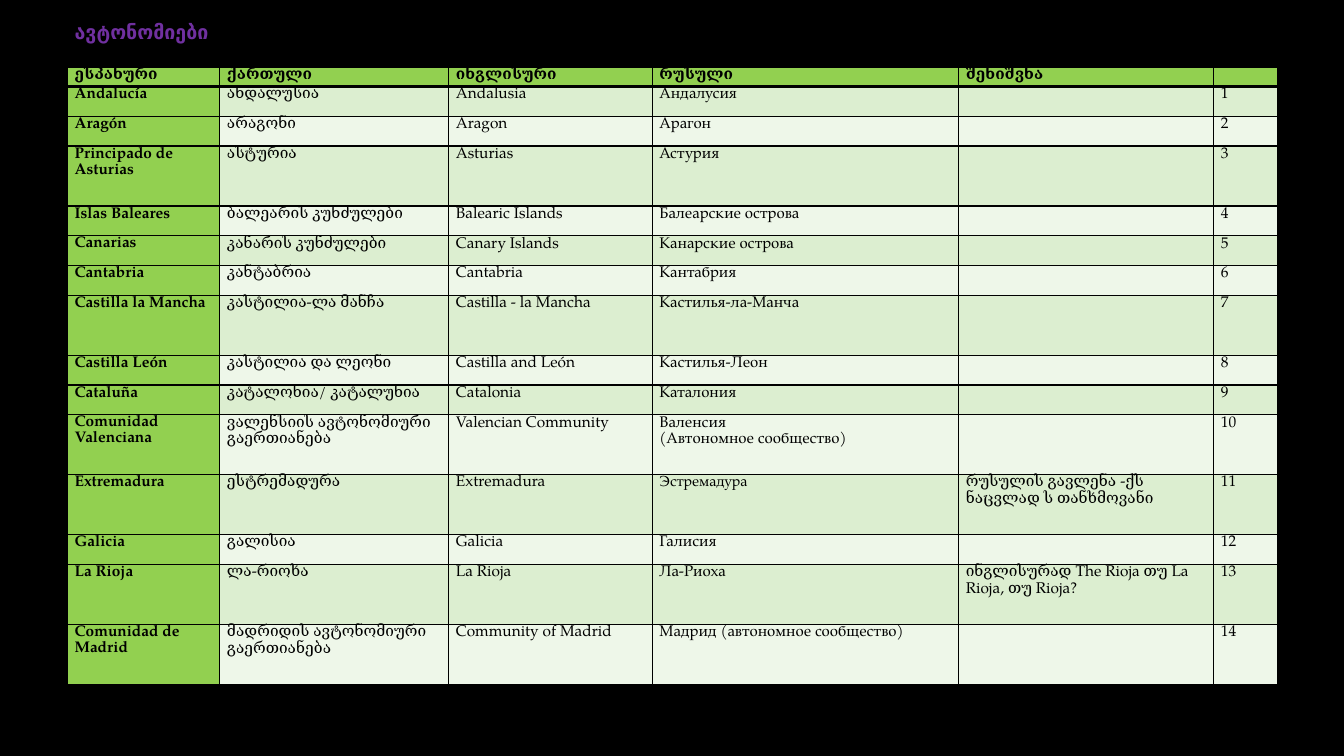
from dataclasses import dataclass

from lxml.etree import SubElement
from pptx import Presentation
from pptx.dml.color import RGBColor
from pptx.enum.text import MSO_ANCHOR
from pptx.oxml.ns import qn
from pptx.util import Cm, Pt

COLORS = {
    "black": "000000",
    "title": "7030A0",
    "header": "92D050",
    "odd": "DCEED0",
    "even": "EEF7E9",
}
FONT = "TeX Gyre Pagella"
TEXT_SIZE = 11
COLUMN_WIDTHS = (3.84, 5.77, 5.13, 7.72, 6.43, 1.6)
HEADER_HEIGHT, ROW_HEIGHT, TALL_HEIGHT = 0.13, 0.75, 1.51
HEADINGS = ("ესპანური", "ქართული", "ინგლისური", "რუსული", "შენიშვნა", "")


@dataclass
class Region:
    spanish: str
    georgian: str
    english: str
    russian: str
    note: str = ""
    tall: bool = False
    russian_size: float = TEXT_SIZE


REGIONS = [
    Region("Andalucía", "ანდალუსია", "Andalusia", "Андалусия"),
    Region("Aragón", "არაგონი", "Aragon", "Арагон"),
    Region("Principado de Asturias", "ასტურია", "Asturias", "Астурия", tall=True),
    Region("Islas Baleares", "ბალეარის კუნძულები", "Balearic Islands", "Балеарские острова"),
    Region("Canarias", "კანარის კუნძულები", "Canary Islands", "Канарские острова"),
    Region("Cantabria", "კანტაბრია", "Cantabria", "Кантабрия"),
    Region("Castilla la Mancha", "კასტილია-ლა მანჩა", "Castilla - la Mancha",
           "Кастилья-ла-Манча", tall=True),
    Region("Castilla León", "კასტილია და ლეონი", "Castilla and León", "Кастилья-Леон"),
    Region("Cataluña", "კატალონია/ კატალუნია", "Catalonia", "Каталония"),
    Region("Comunidad Valenciana", "ვალენსიის ავტონომიური გაერთიანება",
           "Valencian Community", "Валенсия\n(Автономное сообщество)", tall=True),
    Region("Extremadura", "ესტრემადურა", "Extremadura", "Эстремадура",
           "რუსულის გავლენა -ქს ნაცვლად ს თანხმოვანი", tall=True, russian_size=10.5),
    Region("Galicia", "გალისია", "Galicia", "Галисия"),
    Region("La Rioja", "ლა-რიოხა", "La Rioja", "Ла-Риоха",
           "ინგლისურად The Rioja თუ La Rioja, თუ Rioja?", tall=True),
    Region("Comunidad de Madrid", "მადრიდის ავტონომიური გაერთიანება",
           "Community of Madrid", "Мадрид (автономное сообщество)", tall=True),
]


def rgb(name: str) -> RGBColor:
    return RGBColor.from_string(COLORS[name])


def add_run(p, text: str, font: str, size: float, color: str, bold: bool) -> None:
    r = p.add_run()
    r.text = text
    r.font.name = font
    r.font.size = Pt(size)
    r.font.bold = bold
    r.font.color.rgb = rgb(color)


def set_borders(cell, bottom: float) -> None:
    tcPr = cell._tc.get_or_add_tcPr()
    for tag, width in (("lnL", 1), ("lnR", 1), ("lnT", 1), ("lnB", bottom)):
        ln = SubElement(tcPr, qn(f"a:{tag}"), w=str(Pt(width)))
        fill = SubElement(ln, qn("a:solidFill"))
        SubElement(fill, qn("a:srgbClr"), val=COLORS["black"])


def fill_cell(cell, text: str, fill: str, bold: bool = False,
              size: float = TEXT_SIZE, bottom: float = 1) -> None:
    cell.margin_left = cell.margin_right = Cm(0.18)
    cell.margin_top = cell.margin_bottom = 0
    set_borders(cell, bottom)
    cell.fill.solid()
    cell.fill.fore_color.rgb = rgb(fill)
    tf = cell.text_frame
    for i, line in enumerate(text.split("\n")):
        p = tf.add_paragraph() if i else tf.paragraphs[0]
        p.line_spacing = 1.07
        if line:
            add_run(p, line, FONT, size, "black", bold)
        else:
            # An empty cell takes its height from the end-of-paragraph size.
            SubElement(p._p, qn("a:endParaRPr"), sz=str(TEXT_SIZE * 100))


def add_title(s) -> None:
    sp = s.shapes.add_textbox(Cm(1.63), Cm(0.38), Cm(43.46), Cm(0.86))
    tf = sp.text_frame
    tf.word_wrap = True
    tf.vertical_anchor = MSO_ANCHOR.MIDDLE
    add_run(tf.paragraphs[0], "ავტონომიები", "Calibri", 14, "title", True)


def add_regions_table(s) -> None:
    heights = [HEADER_HEIGHT] + [TALL_HEIGHT if x.tall else ROW_HEIGHT for x in REGIONS]
    table = s.shapes.add_table(len(heights), len(COLUMN_WIDTHS), Cm(1.7), Cm(1.7),
                               Cm(sum(COLUMN_WIDTHS)), Cm(sum(heights))).table
    for column, width in zip(table.columns, COLUMN_WIDTHS):
        column.width = Cm(width)
    for row, height in zip(table.rows, heights):
        row.height = Cm(height)

    for col, heading in enumerate(HEADINGS):
        fill_cell(table.cell(0, col), heading, "header", bold=True, bottom=3)
    for n, region in enumerate(REGIONS, 1):
        band = "odd" if n % 2 else "even"
        fill_cell(table.cell(n, 0), region.spanish, "header", bold=True)
        fill_cell(table.cell(n, 1), region.georgian, band)
        fill_cell(table.cell(n, 2), region.english, band)
        fill_cell(table.cell(n, 3), region.russian, band, size=region.russian_size)
        fill_cell(table.cell(n, 4), region.note, band)
        fill_cell(table.cell(n, 5), str(n), band)


def main() -> None:
    prs = Presentation()
    prs.slide_width, prs.slide_height = Cm(33.87), Cm(19.05)
    s = prs.slides.add_slide(prs.slide_layouts[6])
    s.background.fill.solid()
    s.background.fill.fore_color.rgb = rgb("black")
    add_regions_table(s)
    add_title(s)
    prs.save("out.pptx")


if __name__ == "__main__":
    main()
